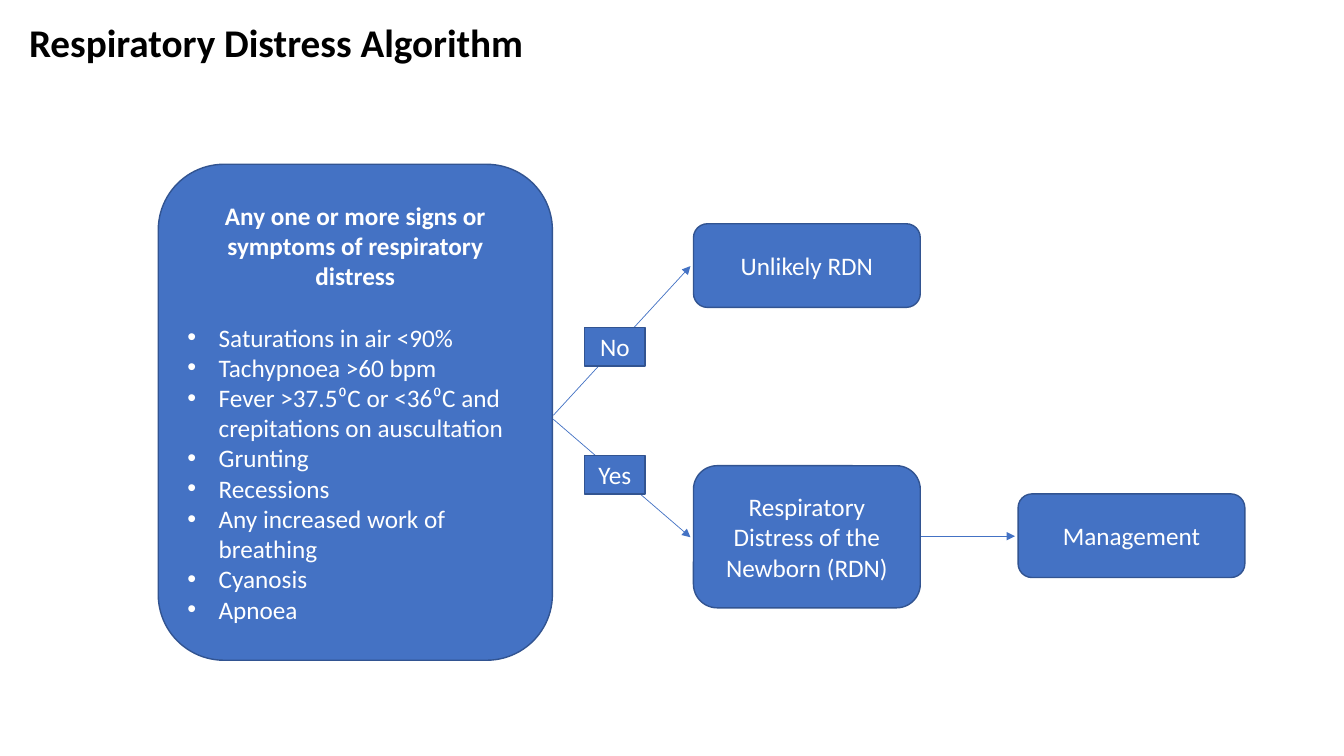
import pptx
import pptx.util
import pptx.dml.color
import pptx.enum.shapes
import pptx.enum.text
import pptx.oxml
import pptx.oxml.ns

RGBColor = pptx.dml.color.RGBColor
BLUE = RGBColor(0x44, 0x72, 0xC4)
EDGE = RGBColor(0x32, 0x54, 0x91)
WHITE = RGBColor(0xFF, 0xFF, 0xFF)
BLACK = RGBColor(0, 0, 0)
ROUND = pptx.enum.shapes.MSO_SHAPE.ROUNDED_RECTANGLE
RECT = pptx.enum.shapes.MSO_SHAPE.RECTANGLE
CENTER = pptx.enum.text.PP_ALIGN.CENTER
LEFT = pptx.enum.text.PP_ALIGN.LEFT
COLS, ROWS = 80, 45
SIGNS = [
    "Saturations in air <90%",
    "Tachypnoea >60 bpm",
    "Fever >37.5⁰C or <36⁰C and crepitations on auscultation",
    "Grunting",
    "Recessions",
    "Any increased work of breathing",
    "Cyanosis",
    "Apnoea",
]


class Chart:
    """Draws flow chart parts on one slide, placed by columns and rows."""

    def __init__(self, deck):
        self.slide = deck.slides.add_slide(deck.slide_layouts[6])
        self.shapes = self.slide.shapes
        self.col = deck.slide_width / COLS
        self.row = deck.slide_height / ROWS

    def place(self, x, y):
        return round(x * self.col), round(y * self.row)

    def label(self, para, text, size=18, color=WHITE, bold=False, align=CENTER):
        para.text = text
        para.alignment = align
        para.font.name = "Calibri"
        para.font.size = pptx.util.Pt(size)
        para.font.bold = bold
        para.font.color.rgb = color

    def title(self, x, y, w, h, text):
        box = self.shapes.add_textbox(*self.place(x, y), *self.place(w, h))
        box.text_frame.word_wrap = True
        self.label(box.text_frame.paragraphs[0], text, 28, BLACK, True, LEFT)

    def box(self, x, y, w, h, text, kind=ROUND, bold=False):
        shape = self.shapes.add_shape(kind, *self.place(x, y), *self.place(w, h))
        shape.shadow.inherit = False
        shape.fill.solid()
        shape.fill.fore_color.rgb = BLUE
        shape.line.color.rgb = EDGE
        shape.line.width = pptx.util.Pt(1)
        frame = shape.text_frame
        frame.word_wrap = True
        frame.vertical_anchor = pptx.enum.text.MSO_ANCHOR.MIDDLE
        self.label(frame.paragraphs[0], text, bold=bold)
        return frame

    def bullets(self, frame, items):
        frame.paragraphs[0].space_after = pptx.util.Pt(22)
        indent = pptx.util.Inches(0.31)
        for item in items:
            para = frame.add_paragraph()
            self.label(para, item, align=LEFT)
            props = para._p.get_or_add_pPr()
            props.set("marL", str(indent))
            props.set("indent", str(-indent))
            for tag, key, value in (("buFont", "typeface", "Arial"), ("buChar", "char", "•")):
                mark = pptx.oxml.parse_xml(
                    f'<a:{tag} {pptx.oxml.ns.nsdecls("a")} {key}="{value}"/>')
                props.insert_element_before(mark, "a:tabLst", "a:defRPr", "a:extLst")

    def arrow(self, start, end):
        line = self.shapes.add_connector(
            pptx.enum.shapes.MSO_CONNECTOR.STRAIGHT, *self.place(*start), *self.place(*end))
        line.line.color.rgb = BLUE
        line.line.width = pptx.util.Pt(0.5)
        space = pptx.oxml.ns.nsdecls("a")
        props = line._element.spPr
        head = pptx.oxml.parse_xml(f'<a:tailEnd {space} type="triangle"/>')
        props.get_or_add_ln().append(head)
        props.append(pptx.oxml.parse_xml(f"<a:effectLst {space}/>"))


def main():
    deck = pptx.Presentation()
    deck.slide_width = pptx.util.Inches(13.33)
    deck.slide_height = pptx.util.Inches(7.5)
    chart = Chart(deck)

    chart.title(1.14, 0.78, 33.06, 3.42, "Respiratory Distress Algorithm")
    heading = "Any one or more signs or symptoms of respiratory distress"
    signs = chart.box(9.42, 9.78, 23.46, 29.52, heading, bold=True)
    chart.bullets(signs, SIGNS)

    chart.arrow((32.94, 24.96), (41.1, 31.98))
    chart.arrow((32.94, 24.72), (41.1, 15.84))
    chart.arrow((54.78, 31.92), (60.42, 31.92))

    for x, y, h, text in (
        (41.28, 13.32, 4.98, "Unlikely RDN"),
        (41.28, 27.72, 8.46, "Respiratory Distress of the Newborn (RDN)"),
        (60.6, 29.4, 4.98, "Management"),
    ):
        chart.box(x, y, 13.5, h, text)
    for y, text in ((19.5, "No"), (27.12, "Yes")):
        chart.box(34.8, y, 3.6, 2.28, text, RECT)

    deck.save("out.pptx")


if __name__ == "__main__":
    main()
